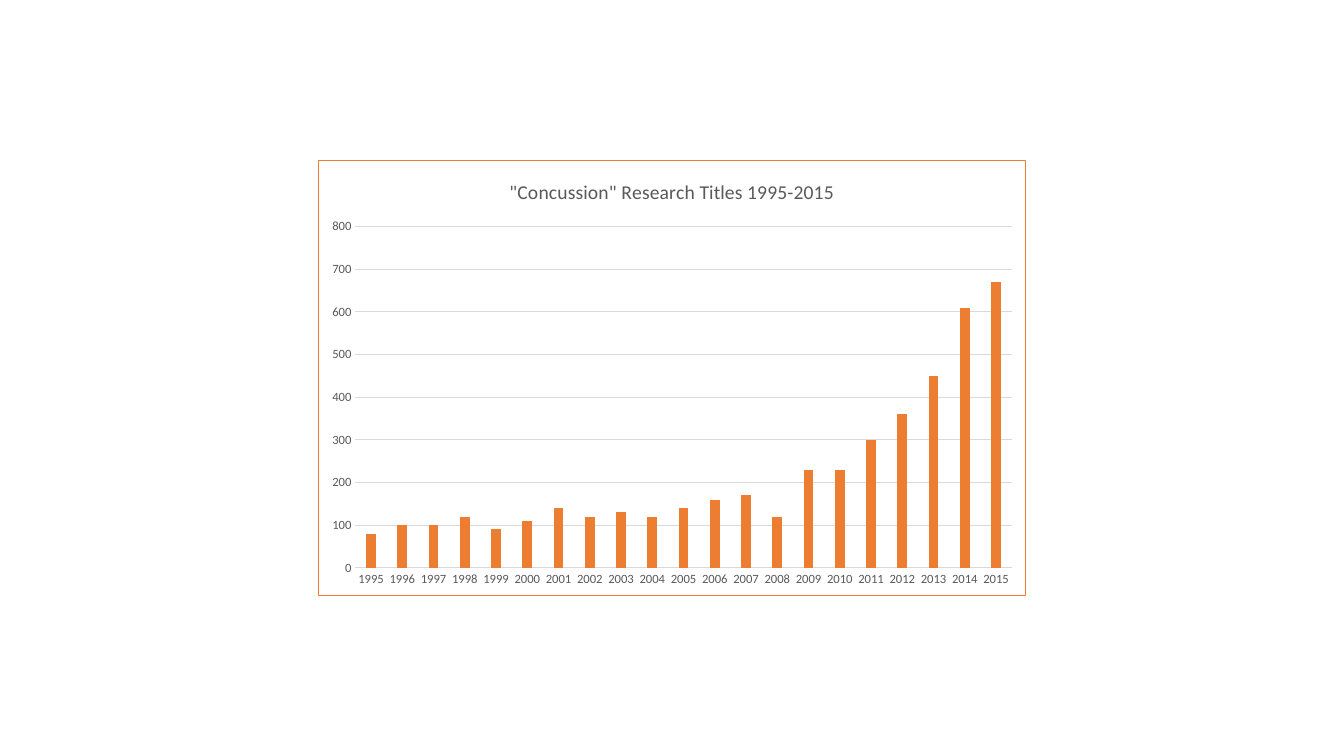
from lxml import etree
from pptx import Presentation
from pptx.chart.data import CategoryChartData
from pptx.dml.color import RGBColor
from pptx.enum.chart import XL_CHART_TYPE, XL_TICK_MARK
from pptx.oxml import parse_xml
from pptx.oxml.ns import nsdecls, qn
from pptx.util import Inches, Pt

ORANGE = RGBColor(0xED, 0x7D, 0x31)
GRAY = RGBColor(0x59, 0x59, 0x59)
LIGHT_GRAY = RGBColor(0xD9, 0xD9, 0xD9)
WHITE = RGBColor(0xFF, 0xFF, 0xFF)

TITLE = '"Concussion" Research Titles 1995-2015'
FIRST_YEAR = 1995
TITLE_COUNTS = [80, 100, 100, 120, 90, 110, 140, 120, 130, 120, 140,
                160, 170, 120, 230, 230, 300, 360, 450, 610, 670]


def style_font(font, size, color=GRAY):
    font.name = "Calibri"
    font.size = Pt(size)
    font.bold = False
    font.color.rgb = color


def style_line(line, color):
    line.color.rgb = color
    line.width = Pt(0.75)


def style_axis(axis):
    axis.major_tick_mark = XL_TICK_MARK.NONE
    axis.minor_tick_mark = XL_TICK_MARK.NONE
    style_font(axis.tick_labels.font, 9)


def frame_chart(chart, fill, border):
    """Give the whole chart area a fill and a thin border."""
    sp_pr = parse_xml(
        f'<c:spPr {nsdecls("c", "a")}>'
        f'<a:solidFill><a:srgbClr val="{fill}"/></a:solidFill>'
        f'<a:ln w="{Pt(0.75)}"><a:solidFill><a:srgbClr val="{border}"/>'
        '</a:solidFill></a:ln></c:spPr>')
    chart_space = chart.element
    chart_space.find(qn("c:chart")).addnext(sp_pr)
    rounded = chart_space.find(qn("c:roundedCorners"))
    if rounded is None:
        rounded = etree.Element(qn("c:roundedCorners"))
        chart_space.find(qn("c:chart")).addprevious(rounded)
    rounded.set("val", "0")


def add_title(chart, text):
    chart.has_title = True
    tf = chart.chart_title.text_frame
    tf.text = text
    style_font(tf.paragraphs[0].runs[0].font, 14)
    chart.chart_title.include_in_layout = False


def add_column_chart(slide):
    data = CategoryChartData()
    data.categories = [str(FIRST_YEAR + i) for i in range(len(TITLE_COUNTS))]
    data.add_series("Series 1", TITLE_COUNTS)
    chart = slide.shapes.add_chart(
        XL_CHART_TYPE.COLUMN_CLUSTERED, Inches(3.15), Inches(1.59),
        Inches(7.03), Inches(4.32), data).chart
    style_font(chart.font, 10, RGBColor(0, 0, 0))
    chart.has_legend = False
    add_title(chart, TITLE)
    frame_chart(chart, WHITE, ORANGE)

    plot = chart.plots[0]
    plot.gap_width = 219
    plot.overlap = -27
    plot.vary_by_categories = False
    fill = plot.series[0].format.fill
    fill.solid()
    fill.fore_color.rgb = ORANGE

    style_axis(chart.category_axis)
    style_line(chart.category_axis.format.line, LIGHT_GRAY)

    value_axis = chart.value_axis
    style_axis(value_axis)
    value_axis.format.line.fill.background()
    value_axis.minimum_scale = 0
    value_axis.maximum_scale = 800
    value_axis.major_unit = 100
    style_line(value_axis.major_gridlines.format.line, LIGHT_GRAY)


def main():
    prs = Presentation()
    prs.slide_width = Inches(13.33)
    prs.slide_height = Inches(7.5)
    slide = prs.slides.add_slide(prs.slide_layouts[6])
    add_column_chart(slide)
    prs.save("out.pptx")


if __name__ == "__main__":
    main()
